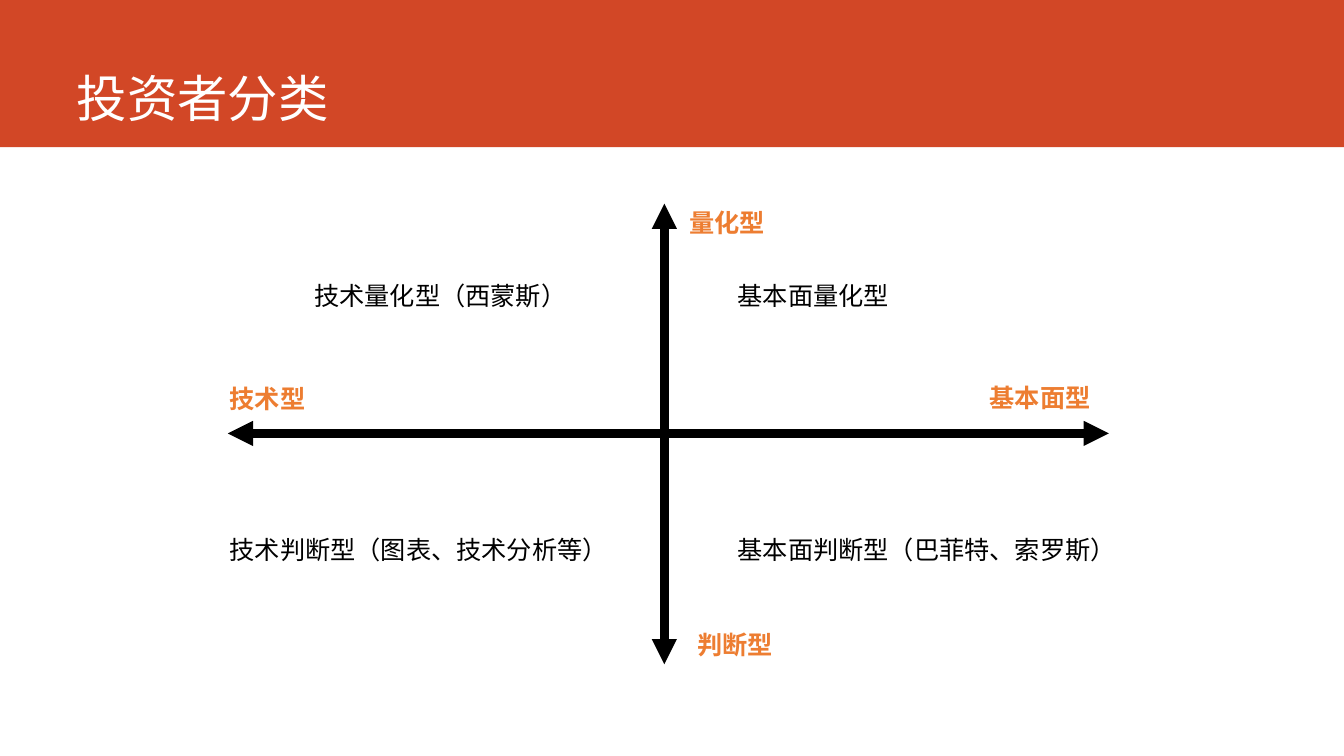
from dataclasses import dataclass

from lxml import etree
from pptx import Presentation
from pptx.dml.color import RGBColor
from pptx.enum.shapes import MSO_CONNECTOR, MSO_SHAPE
from pptx.enum.text import MSO_ANCHOR, MSO_AUTO_SIZE, PP_ALIGN
from pptx.oxml.ns import qn
from pptx.util import Inches, Pt

STRAIGHT = MSO_CONNECTOR.STRAIGHT
RECTANGLE = MSO_SHAPE.RECTANGLE
BOTTOM = MSO_ANCHOR.BOTTOM
LEFT = PP_ALIGN.LEFT
FIXED, GROW = MSO_AUTO_SIZE.NONE, MSO_AUTO_SIZE.SHAPE_TO_FIT_TEXT

COLORS = {"banner": "D24726", "title": "FFFFFF", "pole": "ED7D31", "ink": "000000"}
LATIN_FONT, CHINESE_FONT = "DejaVu Sans", "Noto Sans CJK SC"
WIDTH, HEIGHT = Inches(13.33), Inches(7.5)
LABEL_SIZE, LABEL_INSET = Pt(18), Inches(0.1)

# All positions below are percentages of the slide's width and height.
CENTER_X, CENTER_Y = 49.43, 57.33
LEFT_COLUMN, RIGHT_COLUMN = 16.35, 54.15
UPPER_ROW, LOWER_ROW = 36.4, 70


@dataclass(frozen=True)
class Axis:
    x1: float
    y1: float
    x2: float
    y2: float


@dataclass(frozen=True)
class Label:
    text: str
    x: float
    y: float
    is_pole: bool = False


AXES = [
    Axis(16.95, CENTER_Y, 82.5, CENTER_Y),
    Axis(CENTER_X, 87.87, CENTER_X, 26.93),
]
LABELS = [
    Label("量化型", 50.55, 26.8, True),
    Label("判断型", 51.15, 82.53, True),
    Label("基本面型", 72.9, 49.87, True),
    Label("技术型", LEFT_COLUMN, 50, True),
    Label("技术量化型（西蒙斯）", 22.65, UPPER_ROW),
    Label("技术判断型（图表、技术分析等）", LEFT_COLUMN, LOWER_ROW),
    Label("基本面量化型", RIGHT_COLUMN, UPPER_ROW),
    Label("基本面判断型（巴菲特、索罗斯）", RIGHT_COLUMN, LOWER_ROW),
]


def across(percent: float) -> int:
    return round(WIDTH * percent / 100)


def down(percent: float) -> int:
    return round(HEIGHT * percent / 100)


def add_text(paragraph, text: str, size: int, color: str, latin: str, bold: bool = False) -> None:
    run = paragraph.add_run()
    run.text = text
    font = run.font
    font.size, font.bold, font.name = size, bold, latin
    font.color.rgb = RGBColor.from_string(COLORS[color])
    east_asian = etree.SubElement(run._r.get_or_add_rPr(), qn("a:ea"))
    east_asian.set("typeface", CHINESE_FONT)


def add_banner(slide) -> None:
    banner = slide.shapes.add_shape(RECTANGLE, 0, 0, WIDTH, down(19.47))
    banner.shadow.inherit = False
    banner.fill.solid()
    banner.fill.fore_color.rgb = RGBColor.from_string(COLORS["banner"])
    banner.line.fill.background()
    # Keep the banner behind the title placeholder.
    slide.shapes._spTree.insert(2, banner._element)


def fill_title(slide, text: str) -> None:
    title = slide.shapes.title
    title.left, title.top = across(4.95), 0
    title.width, title.height = across(88.22), down(17.6)
    frame = title.text_frame
    frame.auto_size, frame.vertical_anchor = FIXED, BOTTOM
    heading = frame.paragraphs[0]
    heading.alignment = LEFT
    add_text(heading, text, Pt(36), "title", CHINESE_FONT)


def add_axis(slide, axis: Axis) -> None:
    """Draw a thick line with an arrowhead at both ends."""
    arrow = slide.shapes.add_connector(
        STRAIGHT, across(axis.x1), down(axis.y1), across(axis.x2), down(axis.y2)
    )
    arrow.line.width = Pt(6)
    arrow.line.color.rgb = RGBColor.from_string(COLORS["ink"])
    outline = arrow.line._get_or_add_ln()
    for end in ("a:headEnd", "a:tailEnd"):
        etree.SubElement(outline, qn(end)).set("type", "triangle")
    etree.SubElement(arrow._element.spPr, qn("a:effectLst"))


def add_label(slide, label: Label) -> None:
    """Place a one-line label whose width follows its character count."""
    width = len(label.text) * LABEL_SIZE + 2 * LABEL_INSET
    box = slide.shapes.add_textbox(across(label.x), down(label.y), width, down(5.33))
    frame = box.text_frame
    frame.word_wrap, frame.auto_size = False, GROW
    color = "pole" if label.is_pole else "ink"
    add_text(frame.paragraphs[0], label.text, LABEL_SIZE, color, LATIN_FONT, label.is_pole)


def main() -> None:
    deck = Presentation()
    deck.slide_width, deck.slide_height = WIDTH, HEIGHT
    slide = deck.slides.add_slide(deck.slide_layouts.get_by_name("Title Only"))
    add_banner(slide)
    fill_title(slide, "投资者分类")
    for axis in AXES:
        add_axis(slide, axis)
    for label in LABELS:
        add_label(slide, label)
    deck.save("out.pptx")


if __name__ == "__main__":
    main()
